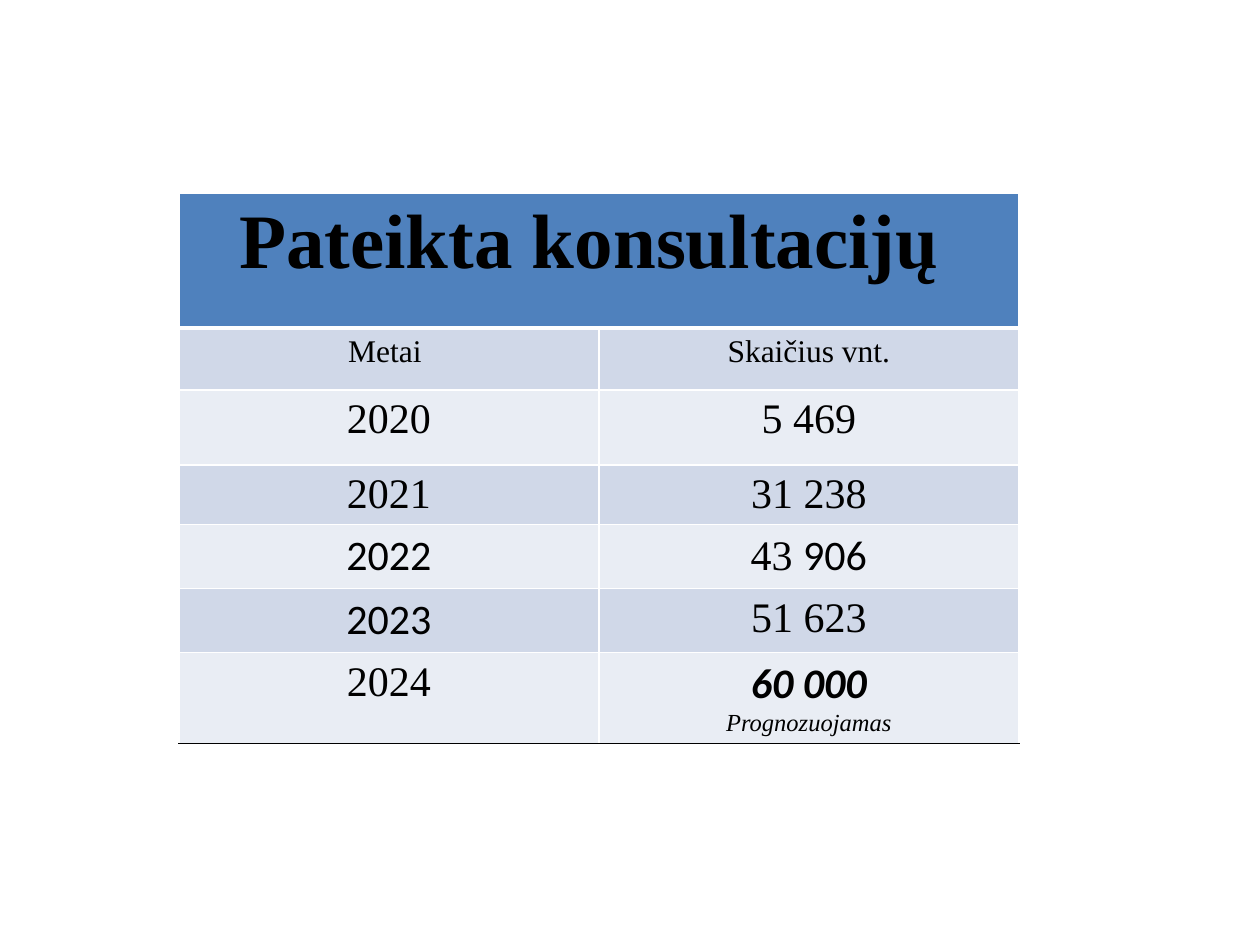
from lxml import etree
from pptx import Presentation
from pptx.dml.color import RGBColor
from pptx.enum import text
from pptx.oxml import ns
from pptx.util import Pt

BLACK = RGBColor(0x00, 0x00, 0x00)
WHITE = RGBColor(0xFF, 0xFF, 0xFF)
HEADER_BLUE = RGBColor(0x4F, 0x81, 0xBD)
BANDS = [RGBColor(0xD0, 0xD8, 0xE8), RGBColor(0xE9, 0xED, 0xF4)]
SERIF, SANS = "Times New Roman", "Calibri"


def piece(words, size=24, font=SERIF, bold=False, italic=False):
    return words, size, font, bold, italic


# Each row: height, then its cells; a cell is a list of paragraphs made of pieces
ROWS = [
    (77, [[[piece("Pateikta konsultacijų ", 44, bold=True)]]]),
    (35.3, [[[piece("Metai ", 18)]], [[piece("Skaičius vnt.", 18)]]]),
    (43, [[[piece("2020")]], [[piece("5 469")]]]),
    (34, [[[piece("2021")]], [[piece("31 238")]]]),
    (36.5, [[[piece("2022", font=SANS)]],
            [[piece("43 "), piece("906", font=SANS)]]]),
    (36.5, [[[piece("2023", font=SANS)]], [[piece("51 623")]]]),
    (52, [[[piece("2024")]],
          [[piece("60 000", font=SANS, bold=True, italic=True)],
           [piece("Prognozuojamas", 14, italic=True)]]]),
]
LEFT, TOP, COLUMN_WIDTH, COLUMNS = 102.25, 110.5, 240, 2


def set_border(cell, side, color, width):
    line = etree.SubElement(cell._tc.get_or_add_tcPr(), ns.qn(f"a:ln{side}"),
                            w=str(Pt(width)))
    fill = etree.SubElement(line, ns.qn("a:solidFill"))
    etree.SubElement(fill, ns.qn("a:srgbClr"), val=str(color))


def write_cell(cell, paragraphs):
    frame = cell.text_frame
    for index, pieces in enumerate(paragraphs):
        paragraph = frame.add_paragraph() if index else frame.paragraphs[0]
        paragraph.alignment = text.PP_ALIGN.CENTER
        for words, size, font, bold, italic in pieces:
            run = paragraph.add_run()
            run.text = words
            run.font.size, run.font.name = Pt(size), font
            run.font.bold, run.font.italic = bold, italic
            run.font.color.rgb = BLACK


deck = Presentation()
deck.slide_width, deck.slide_height = Pt(720), Pt(540)
slide = deck.slides.add_slide(deck.slide_layouts[6])

# Consultations table
consultations = slide.shapes.add_table(
    len(ROWS), COLUMNS, Pt(LEFT), Pt(TOP), Pt(COLUMN_WIDTH * COLUMNS),
    Pt(sum(height for height, _ in ROWS))).table
for column in consultations.columns:
    column.width = Pt(COLUMN_WIDTH)
consultations.cell(0, 0).merge(consultations.cell(0, COLUMNS - 1))

last = len(ROWS) - 1
for r, (height, contents) in enumerate(ROWS):
    consultations.rows[r].height = Pt(height)
    for c in range(COLUMNS):
        cell = consultations.cell(r, c)
        # Thick rule under the heading, black rule under the last row
        set_border(cell, "L", WHITE, 1)
        set_border(cell, "R", WHITE, 1)
        set_border(cell, "T", WHITE, 3 if r == 1 else 1)
        set_border(cell, "B", BLACK if r == last else WHITE, 3 if r == 0 else 1)
        cell.fill.solid()
        cell.fill.fore_color.rgb = BANDS[(r - 1) % 2] if r else HEADER_BLUE
        if c < len(contents):
            write_cell(cell, contents[c])

deck.save("out.pptx")
